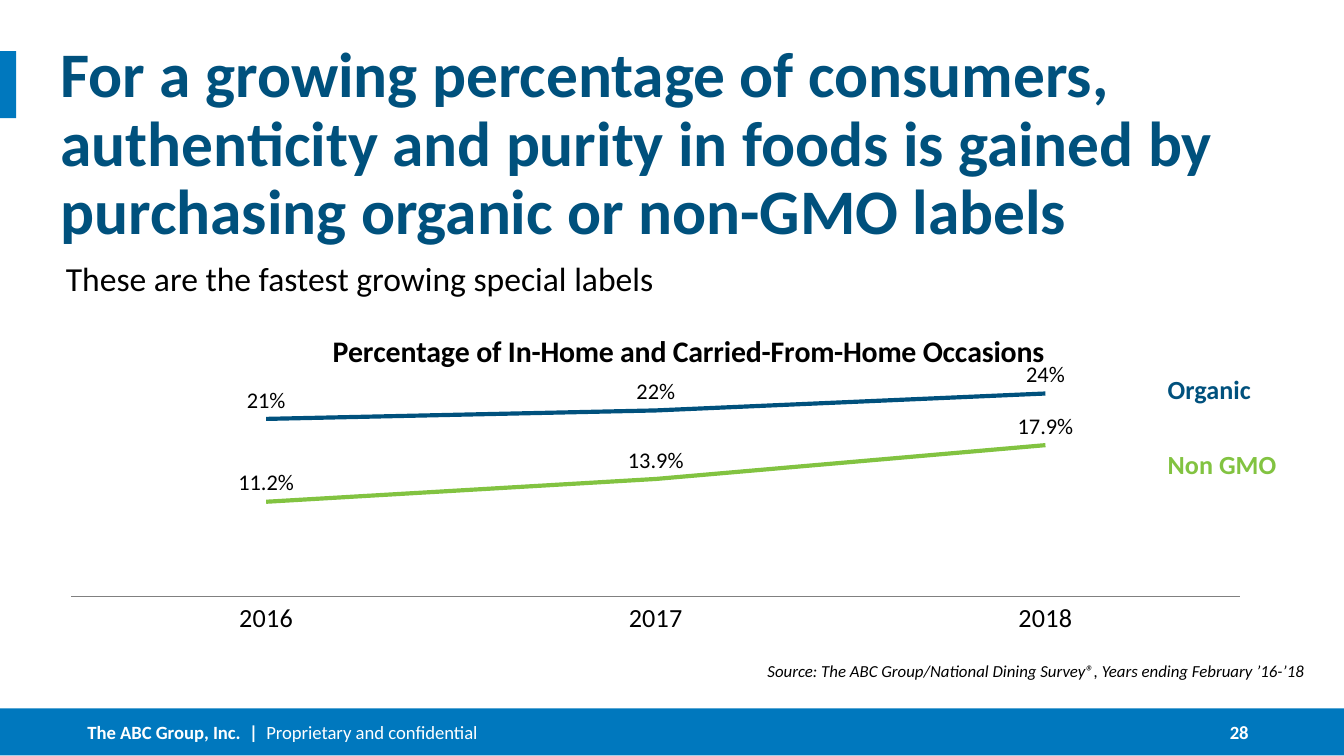
from lxml import etree
from pptx import Presentation
from pptx.chart.data import CategoryChartData
from pptx.dml.color import RGBColor
from pptx.enum.chart import XL_CHART_TYPE, XL_LABEL_POSITION, XL_MARKER_STYLE, XL_TICK_MARK
from pptx.enum.shapes import MSO_SHAPE
from pptx.enum.text import MSO_ANCHOR, PP_ALIGN
from pptx.oxml.ns import qn
from pptx.util import Inches, Pt

LINE = XL_CHART_TYPE.LINE
ABOVE = XL_LABEL_POSITION.ABOVE
NO_MARKER = XL_MARKER_STYLE.NONE
NO_TICKS = XL_TICK_MARK.NONE
RECTANGLE = MSO_SHAPE.RECTANGLE
TOP, MIDDLE, BOTTOM = MSO_ANCHOR.TOP, MSO_ANCHOR.MIDDLE, MSO_ANCHOR.BOTTOM
LEFT, RIGHT = PP_ALIGN.LEFT, PP_ALIGN.RIGHT

BLUE = RGBColor(0x00, 0x78, 0xBE)
NAVY = RGBColor(0x00, 0x51, 0x7D)
GREEN = RGBColor(0x82, 0xC3, 0x41)
GRAY = RGBColor(0x80, 0x80, 0x80)
BLACK = RGBColor(0, 0, 0)
WHITE = RGBColor(255, 255, 255)


def apply(target, values):
    for name, value in values.items():
        setattr(target, name, value)


class SlideBuilder:
    font_name = "Calibri"

    def __init__(self, slide):
        self.slide = slide

    def style(self, font, size, color=BLACK, **values):
        apply(font, {"name": self.font_name, "size": Pt(size), **values})
        font.color.rgb = color

    def bar(self, *box):
        bar = self.slide.shapes.add_shape(RECTANGLE, *map(Inches, box))
        bar.shadow.inherit = False
        bar.fill.solid()
        bar.fill.fore_color.rgb = BLUE
        bar.line.fill.background()

    def text(self, box, runs, size, color=BLACK, anchor=TOP, align=LEFT,
             spacing=1.0, after=0, margins=(0, 0, 0, 0), wrap=True, italic=False):
        frame = self.slide.shapes.add_textbox(*map(Inches, box)).text_frame
        sides = ("margin_left", "margin_top", "margin_right", "margin_bottom")
        apply(frame, {"word_wrap": wrap, "vertical_anchor": anchor,
                      **dict(zip(sides, map(Inches, margins)))})
        paragraph = frame.paragraphs[0]
        apply(paragraph, {"alignment": align, "line_spacing": spacing,
                          "space_after": Pt(after)})
        for words, bold in runs:
            run = paragraph.add_run()
            run.text = words
            self.style(run.font, size, color, bold=bold, italic=italic)

    def place(self, parent, index, **fractions):
        for old in parent.findall(qn("c:layout")):
            parent.remove(old)
        layout = etree.Element(qn("c:layout"))
        manual = etree.SubElement(layout, qn("c:manualLayout"))
        if "w" in fractions:
            etree.SubElement(manual, qn("c:layoutTarget")).set("val", "inner")
        for mode in ("xMode", "yMode"):
            etree.SubElement(manual, qn("c:" + mode)).set("val", "edge")
        for name, value in fractions.items():
            etree.SubElement(manual, qn("c:" + name)).set("val", str(value))
        parent.insert(index, layout)

    def line_chart(self, box, title, years, trends):
        data = CategoryChartData()
        data.categories = years
        for name, values, number_format, color in trends:
            data.add_series(name, values, number_format)
        chart = self.slide.shapes.add_chart(LINE, *map(Inches, box), data).chart
        self.style(chart.font, 12)
        chart.has_legend = False

        heading = chart.chart_title
        heading.text_frame.text = title
        self.style(heading.text_frame.paragraphs[0].runs[0].font, 16, bold=True)
        self.place(chart._chartSpace.chart.find(qn("c:title")), 1, x=0.23, y=0.05)
        self.place(chart._chartSpace.chart.plotArea, 0, x=0.02, y=0.23, w=0.96, h=0.64)

        apply(chart.value_axis, {"visible": False, "has_major_gridlines": False,
                                 "minimum_scale": 0, "maximum_scale": 0.25})
        year_axis = chart.category_axis
        apply(year_axis, {"major_tick_mark": NO_TICKS, "minor_tick_mark": NO_TICKS})
        year_axis.format.line.color.rgb = GRAY
        year_axis.format.line.width = Pt(0.75)
        self.style(year_axis.tick_labels.font, 14)

        plot = chart.plots[0]
        plot.vary_by_categories = False
        for series, (name, values, number_format, color) in zip(plot.series, trends):
            series.smooth = False
            series.marker.style = NO_MARKER
            series.format.line.color.rgb = color
            series.format.line.width = Pt(2.25)
            labels = series.data_labels
            apply(labels, {"show_value": True, "position": ABOVE,
                           "number_format": number_format,
                           "number_format_is_linked": False})
            self.style(labels.font, 12)


def main():
    deck = Presentation()
    deck.slide_width = Inches(10)
    deck.slide_height = deck.slide_width * 9 // 16
    page = SlideBuilder(deck.slides.add_slide(deck.slide_layouts[6]))

    page.bar(0, 5.27, 10, 0.35)
    page.bar(0, 0.38, 0.12, 0.5)
    page.text((0.65, 5.27, 4.11, 0.35),
              [("The ABC Group, Inc.  |  ", True), ("Proprietary and confidential", False)],
              10, WHITE, MIDDLE)
    page.text((8.79, 5.27, 0.65, 0.35), [("28", True)], 10, WHITE, MIDDLE, RIGHT,
              margins=(0, 0.05, 0.15, 0.05), wrap=False)
    page.text((0.45, 0.32, 9.25, 0.5),
              [("For a growing percentage of consumers, authenticity and purity in foods "
                "is gained by purchasing organic or non-GMO labels", True)],
              34, NAVY, spacing=0.9, after=2)
    page.text((0.49, 1.95, 9.25, 0.4),
              [("These are the fastest growing special labels", False)],
              18, spacing=0.9, after=2)
    page.text((0.45, 4.78, 9.25, 0.29),
              [("Source: The ABC Group/National Dining Survey®, "
                "Years ending February ’16-’18", False)],
              9, anchor=BOTTOM, align=RIGHT, spacing=0.85, italic=True)

    trends = [("Series 1", (0.21, 0.22, 0.24), "0%", NAVY),
              ("Series 2", (0.112, 0.139, 0.179), "0.0%", GREEN)]
    page.line_chart((0.35, 2.3, 9.06, 2.46),
                    "Percentage of In-Home and Carried-From-Home Occasions",
                    ("2016", "2017", "2018"), trends)
    for label, top, width, color in (("Organic", 2.73, 0.83, NAVY),
                                     ("Non GMO", 3.29, 1.02, GREEN)):
        page.text((8.59, top, width, 0.34), [(label, True)], 14, color,
                  margins=(0.1, 0.05, 0.1, 0.05), wrap=False)

    deck.save("out.pptx")


if __name__ == "__main__":
    main()
